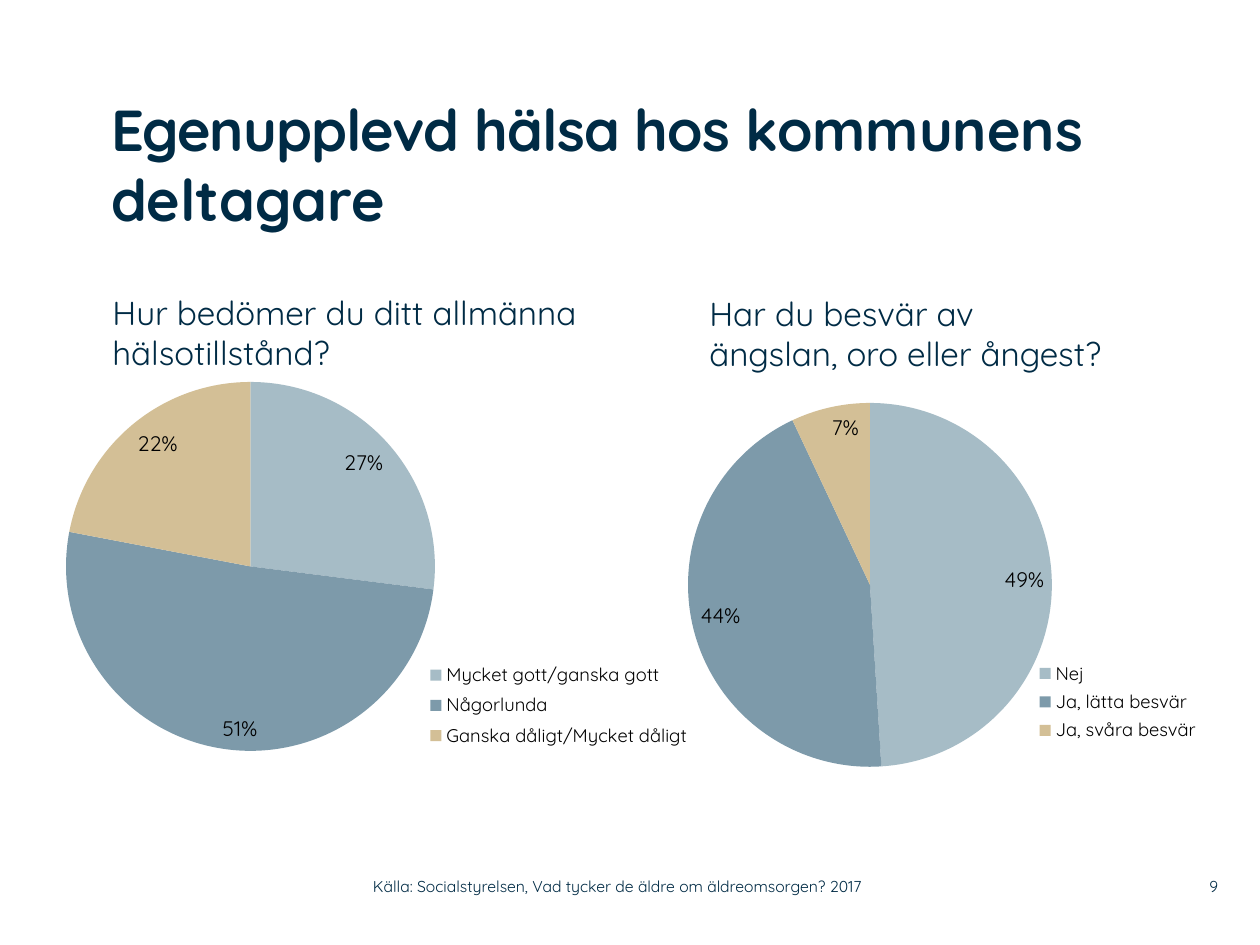
import pptx
import pptx.util
import pptx.chart.data
import pptx.dml.color
import pptx.enum.chart
import pptx.enum.text
import pptx.oxml
import pptx.oxml.ns
from dataclasses import dataclass

SCALE = 914400 / 126  # EMU in one px
ANCHOR = pptx.enum.text.MSO_ANCHOR
ALIGN = pptx.enum.text.PP_ALIGN


def px(*nums):
    return [pptx.util.Emu(round(n * SCALE)) for n in nums]


def rgb(code):
    return pptx.dml.color.RGBColor.from_string(code)


@dataclass
class Theme:
    font: str = "Quicksand"
    ink: str = "002B45"
    black: str = "000000"
    slices: tuple = ("A6BCC6", "7D9AAA", "D3BF96")
    title: float = 33
    head: float = 19
    label: float = 12
    key: float = 10.5
    base: float = 10
    foot: float = 9


class Deck:
    def __init__(self, theme):
        self.theme = theme
        self.prs = pptx.Presentation()
        self.prs.slide_width, self.prs.slide_height = px(1260, 945)
        self.slide = self.prs.slides.add_slide(self.prs.slide_layouts[5])

    def style(self, font, size, color, bold=False):
        font.name = self.theme.font
        font.size = pptx.util.Pt(size)
        font.bold = bold
        font.color.rgb = rgb(color)

    def frame(self, shape, anchor, pad):
        frame = shape.text_frame
        frame.word_wrap = True
        frame.auto_size = pptx.enum.text.MSO_AUTO_SIZE.NONE
        frame.vertical_anchor = anchor
        if not pad:
            frame.margin_left = frame.margin_right = 0
            frame.margin_top = frame.margin_bottom = 0
        return frame

    def title(self, box, parts):
        """Fill the title; parts are (text, spacing in 1/100 pt)."""
        shape = self.slide.shapes.title
        shape.left, shape.top, shape.width, shape.height = px(*box)
        para = self.frame(shape, ANCHOR.TOP, False).paragraphs[0]
        para.alignment = ALIGN.LEFT
        for text, gap in parts:
            run = para.add_run()
            run.text = text
            self.style(run.font, self.theme.title, self.theme.ink, True)
            run._r.get_or_add_rPr().set("spc", str(gap))

    def text(self, box, text, size, anchor=ANCHOR.TOP, align=ALIGN.LEFT, pad=True):
        shape = self.slide.shapes.add_textbox(*px(*box))
        para = self.frame(shape, anchor, pad).paragraphs[0]
        para.text = text
        para.alignment = align
        for run in para.runs:
            self.style(run.font, size, self.theme.ink)

    def layout(self, box, area, inner=False):
        """Manual chart layout for an area given in slide px."""
        left, top, wide, high = box
        x, y, w, h = area
        parts = {"xMode": "edge", "yMode": "edge",
                 "x": round((x - left) / wide, 4), "y": round((y - top) / high, 4),
                 "w": round(w / wide, 4), "h": round(h / high, 4)}
        if inner:
            parts = {"layoutTarget": "inner", **parts}
        body = "".join(f'<c:{k} val="{v}"/>' for k, v in parts.items())
        return pptx.oxml.parse_xml(
            f'<c:layout {pptx.oxml.ns.nsdecls("c")}>'
            f"<c:manualLayout>{body}</c:manualLayout></c:layout>")

    def pie(self, box, plot, key, cats, vals):
        theme = self.theme
        data = pptx.chart.data.CategoryChartData()
        data.categories = cats
        data.add_series("Series 1", vals)
        kind = pptx.enum.chart.XL_CHART_TYPE.PIE
        chart = self.slide.shapes.add_chart(kind, *px(*box), data).chart
        chart.has_title = False
        self.style(chart.font, theme.base, theme.black)

        # Slices and their labels
        pie = chart.plots[0]
        pie.vary_by_categories = True
        for i, color in enumerate(theme.slices):
            fill = pie.series[0].points[i].format.fill
            fill.solid()
            fill.fore_color.rgb = rgb(color)
        pie.has_data_labels = True
        labels = pie.data_labels
        labels.show_percentage = True
        labels.show_value = False
        labels.number_format = "0%"
        labels.number_format_is_linked = False
        labels.position = pptx.enum.chart.XL_LABEL_POSITION.INSIDE_END
        self.style(labels.font, theme.label, theme.black)

        # Legend
        chart.has_legend = True
        legend = chart.legend
        legend.position = pptx.enum.chart.XL_LEGEND_POSITION.RIGHT
        legend.include_in_layout = False
        self.style(legend.font, theme.key, theme.black)

        # Place the pie and the legend
        qn = pptx.oxml.ns.qn
        area = chart._chartSpace.find(".//" + qn("c:plotArea"))
        for old in area.findall(qn("c:layout")):
            area.remove(old)
        area.insert(0, self.layout(box, plot, True))
        node = legend._element
        for old in node.findall(qn("c:layout")):
            node.remove(old)
        spot = node.find(qn("c:legendPos"))
        if spot is None:
            node.insert(0, self.layout(box, key))
        else:
            spot.addnext(self.layout(box, key))


def main():
    theme = Theme()
    deck = Deck(theme)

    # Title
    deck.title((111, 94, 1042, 179),
               [("Egenupplevd hälsa hos ", -50), ("kommunens deltagare", 0)])

    # Questions
    deck.text((100, 286, 513, 93), "Hur bedömer du ditt allmänna hälsotillstånd?", theme.head)
    deck.text((697, 287, 467, 93), "Har du besvär av \nängslan, oro eller ångest?", theme.head)

    # Charts
    deck.pie((49, 352, 683, 431), (66, 382, 369, 369), (428, 657, 262, 97),
             ["Mycket gott/ganska gott", "Någorlunda", "Ganska dåligt/Mycket dåligt"],
             [27, 51, 22])
    deck.pie((617, 354, 683, 431), (688, 403, 364, 364), (1037, 657, 162, 90),
             ["Nej", "Ja, lätta besvär", "Ja, svåra besvär"],
             [49, 44, 7])

    # Footer
    deck.text((1159, 868, 59, 37), "9", theme.foot, ANCHOR.MIDDLE, ALIGN.RIGHT, False)
    deck.text((373, 868, 558, 37),
              "Källa: Socialstyrelsen, Vad tycker de äldre om äldreomsorgen? 2017",
              theme.foot, ANCHOR.MIDDLE, pad=False)

    deck.prs.save("out.pptx")


if __name__ == "__main__":
    main()
